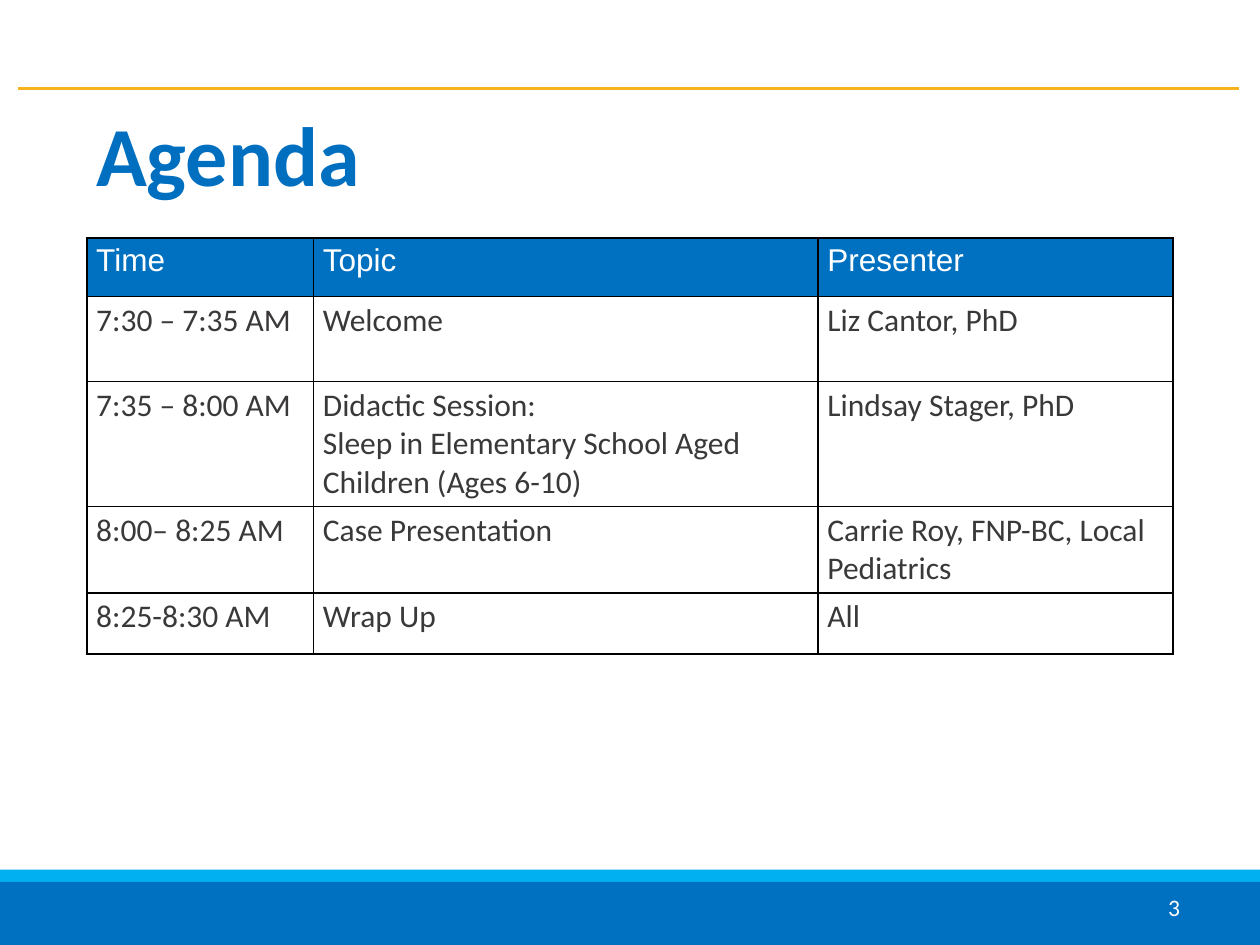
from lxml.etree import SubElement
from pptx import Presentation
from pptx.dml.color import RGBColor
from pptx.enum.shapes import MSO_CONNECTOR, MSO_SHAPE
from pptx.enum.text import MSO_ANCHOR, PP_ALIGN
from pptx.oxml.ns import qn
from pptx.util import Cm, Pt

COLORS = {
    "sky": "00B0F0", "blue": "0070C0", "title": "006FC0", "gold": "F7B31D",
    "white": "FFFFFF", "text": "3A3838", "border": "000000",
}


def rgb(name):
    return RGBColor.from_string(COLORS[name])


def write(tf, text, size=18, color="text", font="Calibri", bold=False,
          align=PP_ALIGN.LEFT, spacing=None):
    """Fill a text frame, one paragraph for each line of text."""
    tf.word_wrap = True
    for i, line in enumerate(text.split("\n")):
        p = tf.add_paragraph() if i else tf.paragraphs[0]
        p.alignment = align
        if spacing:
            p.line_spacing = spacing
        r = p.add_run()
        r.text = line
        r.font.size = Pt(size)
        r.font.name = font
        r.font.bold = bold
        r.font.color.rgb = rgb(color)


prs = Presentation()
prs.slide_width, prs.slide_height = Cm(25.4), Cm(19.05)
s = prs.slides.add_slide(prs.slide_layouts[6])

# Footer bands and top rule
for top, height, color in [(17.53, 1.52, "sky"), (17.78, 1.27, "blue")]:
    band = s.shapes.add_shape(MSO_SHAPE.RECTANGLE, 0, Cm(top), Cm(25.4), Cm(height))
    band.shadow.inherit = False
    band.fill.solid()
    band.fill.fore_color.rgb = rgb(color)
    band.line.fill.background()

rule = s.shapes.add_connector(MSO_CONNECTOR.STRAIGHT, Cm(0.36), Cm(1.78), Cm(24.97), Cm(1.78))
rule.line.color.rgb = rgb("gold")
rule.line.width = Pt(2)
SubElement(rule._element.spPr, qn("a:effectLst"))

# Title and page number
texts = [
    ("Agenda", (1.75, 2.13, 21.92, 2.18), MSO_ANCHOR.MIDDLE,
     dict(size=48, color="title", bold=True, spacing=0.9)),
    ("3", (18.26, 17.91, 5.72, 1.02), MSO_ANCHOR.TOP,
     dict(size=13.5, color="white", align=PP_ALIGN.RIGHT)),
]
for text, box, anchor, style in texts:
    tf = s.shapes.add_textbox(*map(Cm, box)).text_frame
    tf.margin_left = tf.margin_right = Cm(0.19)
    tf.margin_top = tf.margin_bottom = Cm(0.1)
    tf.vertical_anchor = anchor
    write(tf, text, **style)

# Agenda table
agenda = [
    ("Time", "Topic", "Presenter"),
    ("7:30 – 7:35 AM", "Welcome", "Liz Cantor, PhD"),
    ("7:35 – 8:00 AM",
     "Didactic Session:\nSleep in Elementary School Aged Children (Ages 6-10)",
     "Lindsay Stager, PhD"),
    ("8:00– 8:25 AM", "Case Presentation", "Carrie Roy, FNP-BC, Local Pediatrics"),
    ("8:25-8:30 AM", "Wrap Up", "All"),
]
widths = [4.57, 10.17, 7.16]
heights = [1.18, 1.71, 2.52, 1.74, 1.23]
table = s.shapes.add_table(len(heights), len(widths), Cm(1.75), Cm(4.8),
                           Cm(sum(widths)), Cm(sum(heights))).table
table.horz_banding = False
for col, width in zip(table.columns, widths):
    col.width = Cm(width)
for row, height in zip(table.rows, heights):
    row.height = Cm(height)

for i, entries in enumerate(agenda):
    for j, text in enumerate(entries):
        cell = table.cell(i, j)
        cell.margin_left = cell.margin_right = Cm(0.19)
        cell.margin_top = cell.margin_bottom = Cm(0.1)
        tcPr = cell._tc.get_or_add_tcPr()
        for side in ("lnL", "lnR", "lnT", "lnB"):
            ln = SubElement(tcPr, qn(f"a:{side}"), w=str(Pt(1)))
            fill = SubElement(ln, qn("a:solidFill"))
            SubElement(fill, qn("a:srgbClr"), val=COLORS["border"])
        cell.fill.solid()
        cell.fill.fore_color.rgb = rgb("white" if i else "blue")
        style = {} if i else dict(font="Arial", color="white")
        write(cell.text_frame, text, **style)

prs.save("out.pptx")
